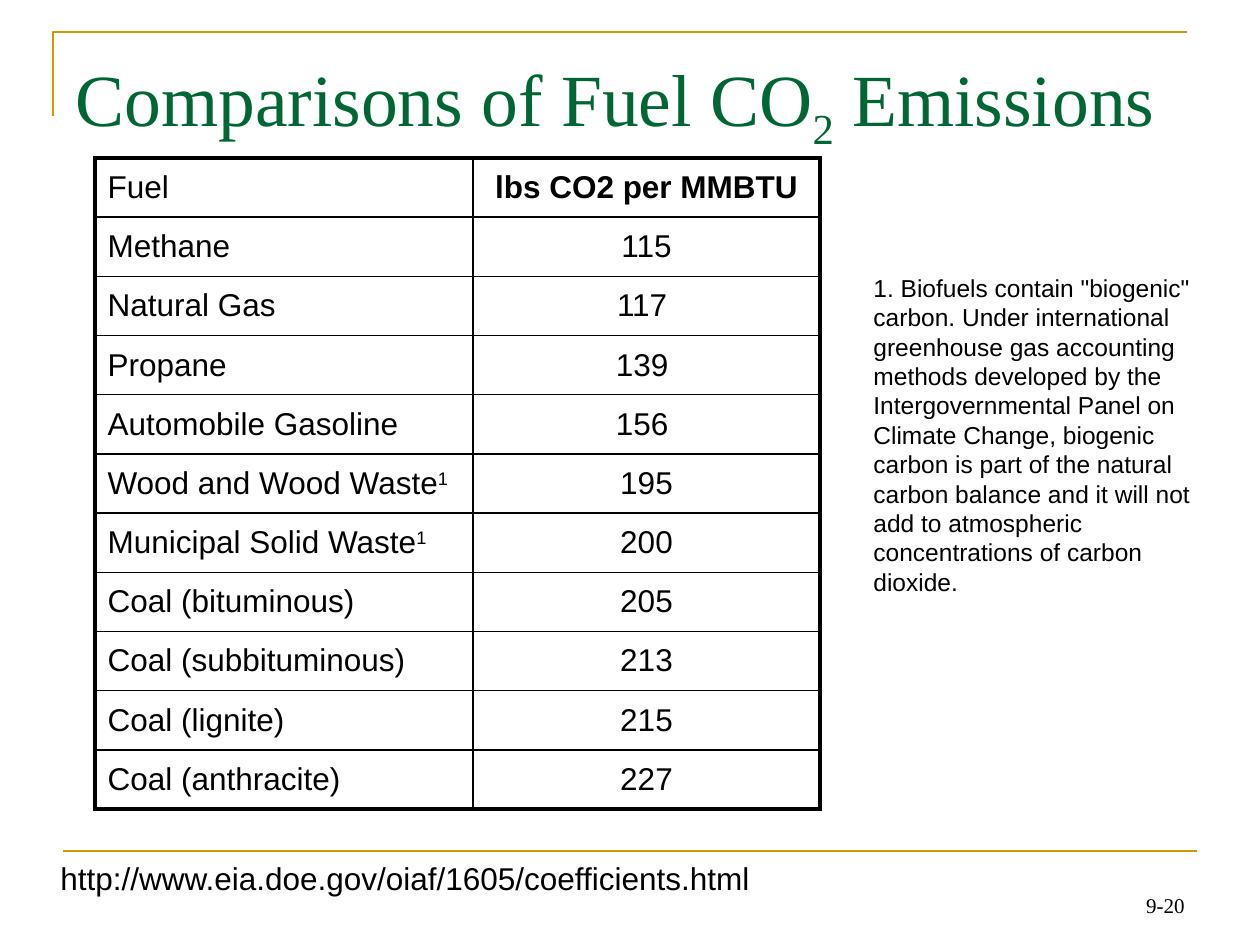
"""Build a slide comparing the CO2 emissions of fuels."""
from dataclasses import dataclass

from lxml.etree import SubElement
from pptx import Presentation
from pptx.dml.color import RGBColor
from pptx.enum.shapes import MSO_CONNECTOR
from pptx.enum.text import MSO_ANCHOR as Anchor, MSO_AUTO_SIZE as AutoSize, PP_ALIGN as Align
from pptx.oxml.ns import qn
from pptx.util import Pt

PX = 914400 / 126


@dataclass(frozen=True)
class Theme:
    ink: str = "000000"
    title: str = "006633"
    accent: str = "CC9900"
    sans: str = "Arial"
    serif: str = "Times New Roman"
    title_size: int = 42
    body_size: int = 18
    note_size: int = 14
    number_size: int = 12
    rule: float = 1.5
    outer_border: float = 2.25
    inner_border: float = 1


THEME = Theme()

TITLE = [("Comparisons of Fuel CO", 0), ("2", -25), (" Emissions", 0)]
HEADER = ([("Fuel", 0)], "lbs CO2 per MMBTU")
FUELS = [
    ([("Methane", 0)], "115"),
    ([("Natural Gas", 0)], "117 "),
    ([("Propane", 0)], "139 "),
    ([("Automobile Gasoline", 0)], "156 "),
    ([("Wood and Wood Waste", 0), ("1", 30)], "195"),
    ([("Municipal Solid Waste", 0), ("1", 30)], "200"),
    ([("Coal (bituminous)", 0)], "205"),
    ([("Coal (subbituminous)", 0)], "213"),
    ([("Coal (lignite)", 0)], "215"),
    ([("Coal (anthracite)", 0)], "227"),
]
NOTE = (
    '1. Biofuels contain "biogenic" carbon. Under international greenhouse gas '
    "accounting methods developed by the Intergovernmental Panel on Climate Change, "
    "biogenic carbon is part of the natural carbon balance and it will not add to "
    "atmospheric concentrations of carbon dioxide."
)
SOURCE = "http://www.eia.doe.gov/oiaf/1605/coefficients.html"
PAGE = "9-20"

TITLE_BOX = (63, 38, 1134, 158)
TITLE_TOP_MARGIN = 15
CORNER = [(53, 116), (53, 32), (1187, 32)]
FOOT_RULE = (63, 851, 1197, 851)
TABLE_BOX = (95, 158, 725, 651)
COLUMN_WIDTHS = (378, 347)
NOTE_BOX = (861, 267, 357, 335)
SOURCE_BOX = (48, 853, 717, 50)
PAGE_BOX = (903, 861, 294, 63)


def emu(*lengths):
    return [round(length * PX) for length in lengths]


def write(frame, parts, size, font=THEME.sans, color=THEME.ink, align=Align.LEFT, bold=False):
    paragraph = frame.paragraphs[0]
    paragraph.alignment = align
    for text, baseline in parts:
        run = paragraph.add_run()
        run.text = text
        run.font.name = font
        run.font.size = Pt(size)
        run.font.bold = bold
        run.font.color.rgb = RGBColor.from_string(color)
        if baseline:
            run.font._element.set("baseline", str(baseline * 1000))


def add_title(slide):
    title = slide.shapes.title
    title.left, title.top, title.width, title.height = emu(*TITLE_BOX)
    frame = title.text_frame
    frame.auto_size = AutoSize.NONE
    frame.vertical_anchor = Anchor.TOP
    frame.margin_top = emu(TITLE_TOP_MARGIN)[0]
    write(frame, TITLE, THEME.title_size, THEME.serif, THEME.title)


def add_text(slide, box, text, size, anchor=Anchor.TOP, wrap=True, grow=True, **style):
    frame = slide.shapes.add_textbox(*emu(*box)).text_frame
    frame.word_wrap = wrap
    frame.auto_size = AutoSize.SHAPE_TO_FIT_TEXT if grow else AutoSize.NONE
    frame.vertical_anchor = anchor
    write(frame, [(text, 0)], size, **style)


def style_rule(shape):
    shape.line.color.rgb = RGBColor.from_string(THEME.accent)
    shape.line.width = Pt(THEME.rule)


def add_rules(slide):
    builder = slide.shapes.build_freeform(*CORNER[0], scale=PX)
    builder.add_line_segments(CORNER[1:], close=False)
    corner = builder.convert_to_shape()
    corner.fill.background()
    corner.shadow.inherit = False
    style_rule(corner)
    foot = slide.shapes.add_connector(MSO_CONNECTOR.STRAIGHT, *emu(*FOOT_RULE))
    style_rule(foot)
    SubElement(foot._element.spPr, qn("a:effectLst"))


def set_borders(cell, outer_sides):
    properties = cell._tc.get_or_add_tcPr()
    for side, outer in zip("LRTB", outer_sides):
        width = THEME.outer_border if outer else THEME.inner_border
        line = SubElement(properties, qn(f"a:ln{side}"), w=str(Pt(width)))
        fill = SubElement(line, qn("a:solidFill"))
        SubElement(fill, qn("a:srgbClr"), val=THEME.ink)


def add_fuel_table(slide):
    rows = [HEADER, *FUELS]
    last_row, last_column = len(rows) - 1, len(COLUMN_WIDTHS) - 1
    table = slide.shapes.add_table(len(rows), len(COLUMN_WIDTHS), *emu(*TABLE_BOX)).table
    table.first_row = table.horz_banding = False
    for column, width in zip(table.columns, emu(*COLUMN_WIDTHS)):
        column.width = width
    for r, (fuel, emission) in enumerate(rows):
        table.rows[r].height = emu(TABLE_BOX[3] / len(rows))[0]
        for c, parts in enumerate((fuel, [(emission, 0)])):
            cell = table.cell(r, c)
            cell.vertical_anchor = Anchor.MIDDLE
            set_borders(cell, (c == 0, c == last_column, r == 0, r == last_row))
            cell.fill.background()
            write(cell.text_frame, parts, THEME.body_size,
                  align=Align.CENTER if c else Align.LEFT, bold=r == 0 and c == 1)


def main():
    presentation = Presentation()
    presentation.slide_width, presentation.slide_height = emu(1260, 945)
    slide = presentation.slides.add_slide(presentation.slide_layouts[5])
    add_rules(slide)
    add_text(slide, PAGE_BOX, PAGE, THEME.number_size, Anchor.BOTTOM, grow=False,
             font=THEME.serif, align=Align.RIGHT)
    add_title(slide)
    add_text(slide, SOURCE_BOX, SOURCE, THEME.body_size, wrap=False)
    add_fuel_table(slide)
    add_text(slide, NOTE_BOX, NOTE, THEME.note_size, Anchor.MIDDLE)
    presentation.save("out.pptx")


if __name__ == "__main__":
    main()
